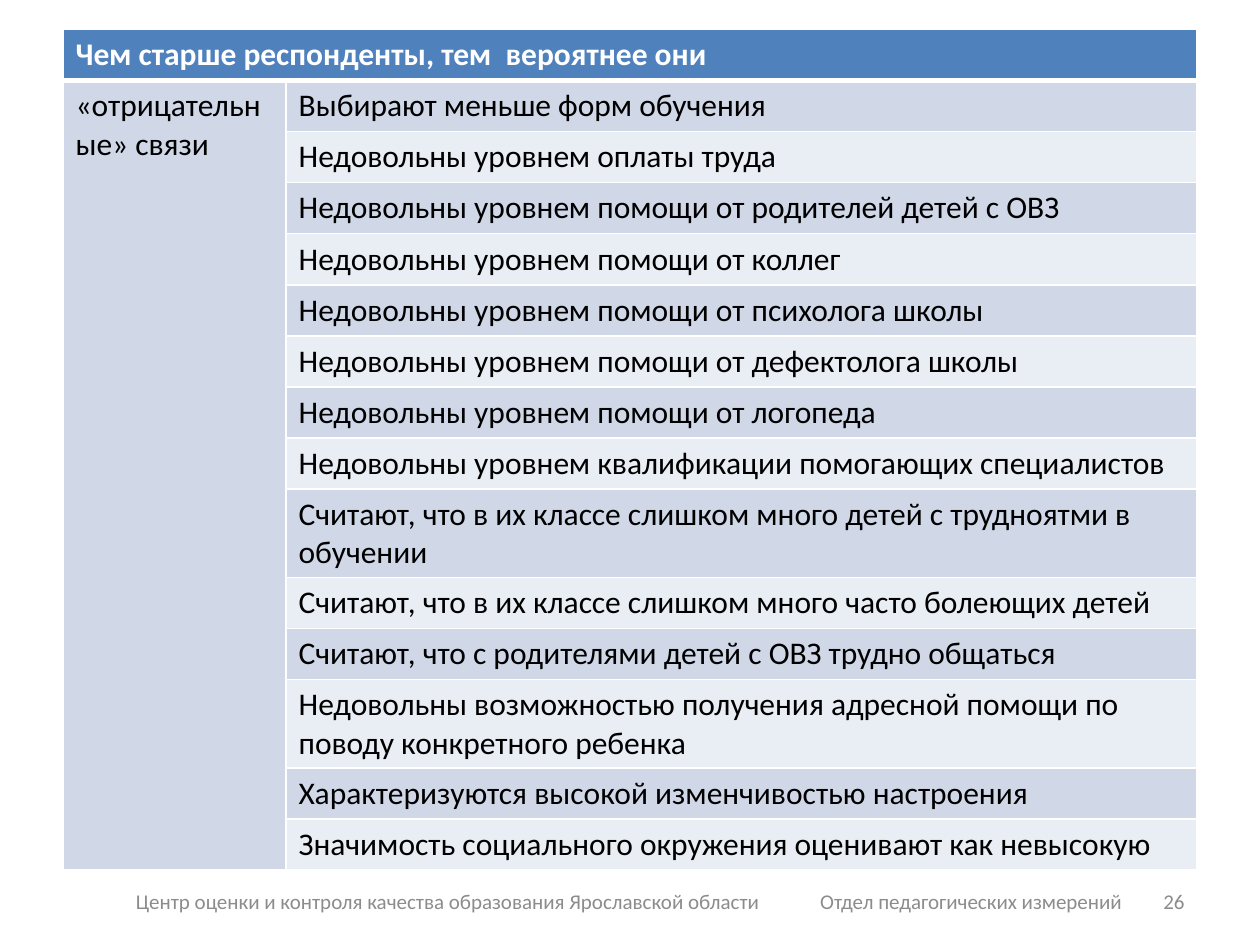
from lxml import etree
from pptx import Presentation
from pptx import util as u
from pptx.dml import color
from pptx.enum import text
from pptx.oxml import ns

HEADER = "Чем старше респонденты, тем  вероятнее они"
GROUP = "«отрицательные» связи"
FINDINGS = [
    "Выбирают меньше форм обучения",
    "Недовольны уровнем оплаты труда",
    "Недовольны уровнем помощи от родителей детей с ОВЗ",
    "Недовольны уровнем помощи от коллег",
    "Недовольны уровнем помощи от психолога школы",
    "Недовольны уровнем помощи от дефектолога школы",
    "Недовольны уровнем помощи от логопеда",
    "Недовольны уровнем квалификации помогающих специалистов",
    "Считают, что в их классе слишком много детей с трудноятми в обучении",
    "Считают, что в их классе слишком много часто болеющих детей",
    "Считают, что с родителями детей с ОВЗ трудно общаться",
    "Недовольны возможностью получения адресной помощи по поводу конкретного ребенка",
    "Характеризуются высокой изменчивостью настроения",
    "Значимость социального окружения оценивают как невысокую",
]
FOOTER = ("Центр оценки и контроля качества образования Ярославской области"
          "\tОтдел педагогических измерений")


def rgb(value):
    return color.RGBColor.from_string(value)


def write(tf, content, size=18, fill="000000", bold=False, align=text.PP_ALIGN.LEFT, font="Calibri"):
    p = tf.paragraphs[0]
    p.alignment = align
    r = p.add_run()
    r.text = content
    r.font.name, r.font.size, r.font.bold = font, u.Pt(size), bold
    r.font.color.rgb = rgb(fill)
    return p


class Deck:
    """Holds the table style and the current slide."""

    accent, bands, line, muted = "4F81BD", ("D0D8E8", "E9EDF4"), "FFFFFF", "8C8C8C"

    def __init__(self, prs):
        self.s = prs.slides.add_slide(prs.slide_layouts[6])

    def label(self, content, x, y, w, h, inset=7.2, tab=None, **fmt):
        tf = self.s.shapes.add_textbox(u.Pt(x), u.Pt(y), u.Pt(w), u.Pt(h)).text_frame
        tf.word_wrap = True
        tf.vertical_anchor = text.MSO_ANCHOR.MIDDLE
        tf.margin_left = u.Pt(inset)
        p = write(tf, content, size=12, fill=self.muted, **fmt)
        if tab:
            tabs = etree.SubElement(p._p.get_or_add_pPr(), ns.qn("a:tabLst"))
            etree.SubElement(tabs, ns.qn("a:tab"), pos=str(u.Pt(tab)), algn="l")

    def cell(self, cell, fill, top=1, bottom=1):
        tcPr = cell._tc.get_or_add_tcPr()
        for side, width in zip("LRTB", (1, 1, top, bottom)):
            ln = etree.SubElement(tcPr, ns.qn(f"a:ln{side}"), w=str(u.Pt(width)))
            solid = etree.SubElement(ln, ns.qn("a:solidFill"))
            etree.SubElement(solid, ns.qn("a:srgbClr"), val=self.line)
        cell.fill.solid()
        cell.fill.fore_color.rgb = rgb(fill)

    def table(self, header, group, findings, x, y, widths, height, row_height):
        n = len(findings) + 1
        sp = self.s.shapes.add_table(n, 2, u.Pt(x), u.Pt(y), u.Pt(sum(widths)), u.Pt(height))
        tbl = sp.table
        for col, width in zip(tbl.columns, widths):
            col.width = u.Pt(width)
        for i, row in enumerate(tbl.rows):
            row.height = u.Pt(row_height)
            band = self.bands[(i - 1) % 2]
            fills = (self.bands[0], band) if i else (self.accent, self.accent)
            for cell, fill in zip(row.cells, fills):
                self.cell(cell, fill, top=3 if i == 1 else 1, bottom=1 if i else 3)
        sp.height = u.Pt(height)
        tbl.cell(0, 0).merge(tbl.cell(0, 1))
        tbl.cell(1, 0).merge(tbl.cell(n - 1, 0))
        write(tbl.cell(0, 0).text_frame, header, fill="FFFFFF", bold=True)
        write(tbl.cell(1, 0).text_frame, group)
        for i, finding in enumerate(findings, 1):
            write(tbl.cell(i, 1).text_frame, finding)


def main():
    prs = Presentation()
    prs.slide_width, prs.slide_height = u.Pt(720), u.Pt(540)
    deck = Deck(prs)
    deck.label(FOOTER, 36.7, 500.5, 646.5, 28.75, inset=41, tab=391)
    deck.label("26", 516, 500.5, 168, 28.75, align=text.PP_ALIGN.RIGHT)
    deck.table(HEADER, GROUP, FINDINGS, 36, 16.75, (127.5, 520.5), 480, 29.2)
    prs.save("out.pptx")


if __name__ == "__main__":
    main()
